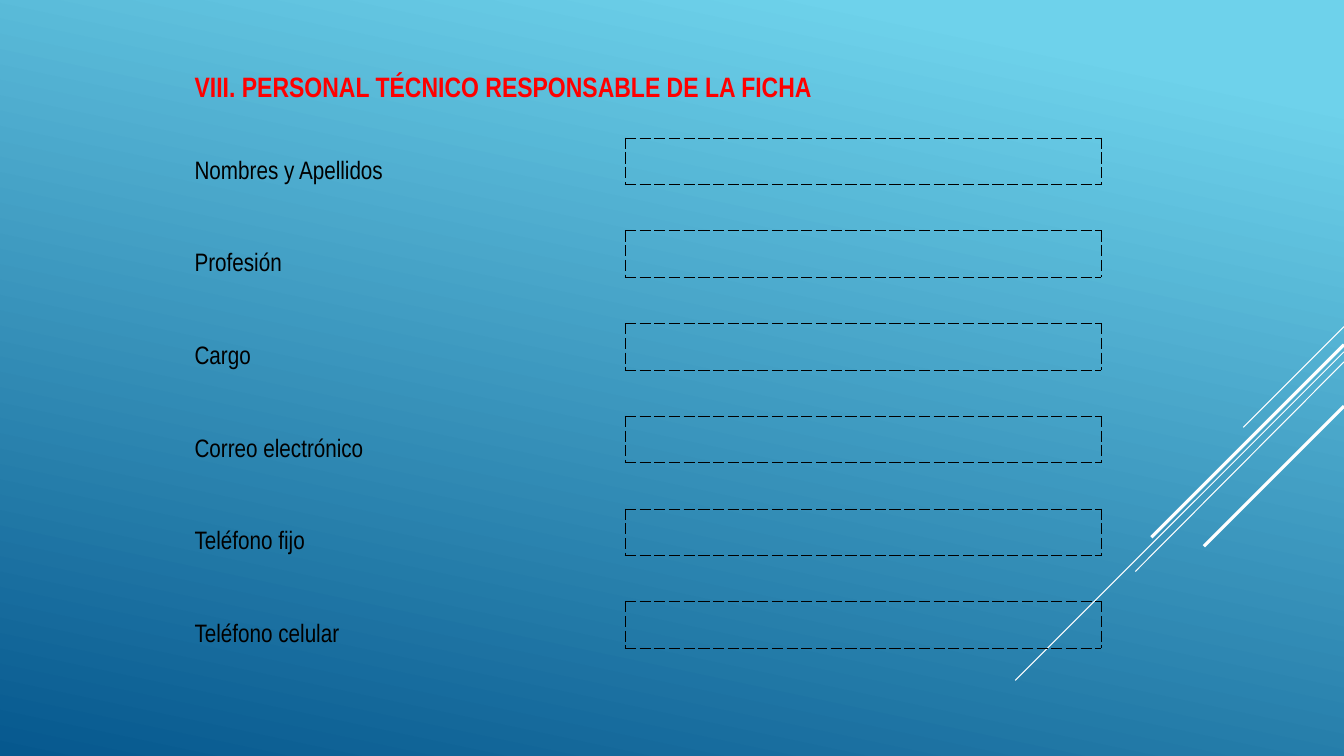
from lxml import etree
from pptx import Presentation
from pptx.dml.color import RGBColor
from pptx.enum.shapes import MSO_CONNECTOR as Connector
from pptx.enum.text import MSO_ANCHOR as Anchor
from pptx.oxml.ns import qn
from pptx.util import Inches, Pt

HEADING = "VIII. PERSONAL TÉCNICO RESPONSABLE DE LA FICHA"
FIELDS = [
    ("Nombres y Apellidos", 2),
    ("Profesión", 1),
    ("Cargo", 1),
    ("Correo electrónico", 2),
    ("Teléfono fijo", 1),
    ("Teléfono celular", 2),
]
FONT = "Arial Narrow"
BLACK, RED, WHITE = "000000", "FF0000", "FFFFFF"
SKY = [(0.1, "6ED2EB"), (1.0, "06588E")]
SKY_ANGLE = 102
RAYS = [
    (3.24, 12.33, 4.24, 0.75),
    (3.49, 10.07, 6.75, 0.75),
    (3.59, 11.26, 5.67, 0.75),
    (3.42, 11.42, 5.33, 2.25),
    (4.03, 11.94, 5.42, 2.25),
]
SLIDE_WIDTH, SLIDE_HEIGHT = 13.33, 7.5
FORM_LEFT, FORM_TOP = 1.92, 0.52
COLUMN_WIDTHS = [1.43, 1.4, 1.45, 1.65, 1.61, 1.46]
ROW_HEIGHTS = [0.51, 0.34] + [0.46] * (2 * len(FIELDS) - 1)
FIRST_FIELD_ROW = 2
BOX_FIRST, BOX_LAST = 3, 5
PLAIN_TABLE = "{2D5ABB26-0587-4C30-8999-92F81FD0307C}"


def color(hex_code):
    return RGBColor.from_string(hex_code)


def write(cell, text, size=18, ink=BLACK, bold=False):
    run = cell.text_frame.paragraphs[0].add_run()
    run.text = text
    run.font.name = FONT
    run.font.size = Pt(size)
    run.font.bold = bold
    run.font.color.rgb = color(ink)


def dash_borders(cell, sides):
    properties = cell._tc.get_or_add_tcPr()
    for side in sides:
        border = etree.SubElement(properties, qn(f"a:ln{side}"), w=str(Pt(0.5)))
        ink = etree.SubElement(border, qn("a:solidFill"))
        etree.SubElement(ink, qn("a:srgbClr"), val=BLACK)
        etree.SubElement(border, qn("a:prstDash"), val="dash")


def border_sides(row, column):
    in_box = BOX_FIRST <= column <= BOX_LAST
    if row < FIRST_FIELD_ROW:
        return "B" if in_box and row == FIRST_FIELD_ROW - 1 else ""
    if row % 2:
        return "TB" if in_box else ""
    if column == BOX_FIRST - 1:
        return "R"
    if column == BOX_FIRST:
        return "LRTB"
    if column == BOX_LAST:
        return "RTB"
    return "TB" if in_box else ""


def paint_background(slide):
    fill = slide.background.fill
    fill.gradient()
    fill.gradient_angle = 360 - SKY_ANGLE
    for stop, (position, shade) in zip(fill.gradient_stops, SKY):
        stop.position = position
        stop.color.rgb = color(shade)


def draw_rays(slide):
    for start_y, end_x, end_y, weight in RAYS:
        ray = slide.shapes.add_connector(
            Connector.STRAIGHT, Inches(SLIDE_WIDTH), Inches(start_y), Inches(end_x), Inches(end_y)
        )
        ray.line.color.rgb = color(WHITE)
        ray.line.width = Pt(weight)
        etree.SubElement(ray._element.spPr, qn("a:effectLst"))


def build_form(slide):
    form = slide.shapes.add_table(
        len(ROW_HEIGHTS), len(COLUMN_WIDTHS), Inches(FORM_LEFT), Inches(FORM_TOP),
        Inches(sum(COLUMN_WIDTHS)), Inches(sum(ROW_HEIGHTS)),
    ).table
    form.first_row = form.horz_banding = False
    form._tbl.tblPr.find(qn("a:tableStyleId")).text = PLAIN_TABLE
    for column, width in zip(form.columns, COLUMN_WIDTHS):
        column.width = Inches(width)
    for row, height in zip(form.rows, ROW_HEIGHTS):
        row.height = Inches(height)

    for row in range(len(ROW_HEIGHTS)):
        for column in range(len(COLUMN_WIDTHS)):
            cell = form.cell(row, column)
            cell.margin_left = cell.margin_right = cell.margin_top = Inches(0.01)
            cell.margin_bottom = 0
            cell.vertical_anchor = Anchor.BOTTOM
            dash_borders(cell, border_sides(row, column))
            cell.fill.background()

    form.cell(0, 0).merge(form.cell(0, 4))
    write(form.cell(0, 0), HEADING, size=20, ink=RED, bold=True)
    for index, (label, span) in enumerate(FIELDS):
        row = FIRST_FIELD_ROW + 2 * index
        if span > 1:
            form.cell(row, 0).merge(form.cell(row, span - 1))
        form.cell(row, BOX_FIRST).merge(form.cell(row, BOX_LAST))
        write(form.cell(row, 0), label)


def main():
    deck = Presentation()
    deck.slide_width, deck.slide_height = Inches(SLIDE_WIDTH), Inches(SLIDE_HEIGHT)
    slide = deck.slides.add_slide(deck.slide_layouts[6])
    paint_background(slide)
    draw_rays(slide)
    build_form(slide)
    deck.save("out.pptx")


if __name__ == "__main__":
    main()
